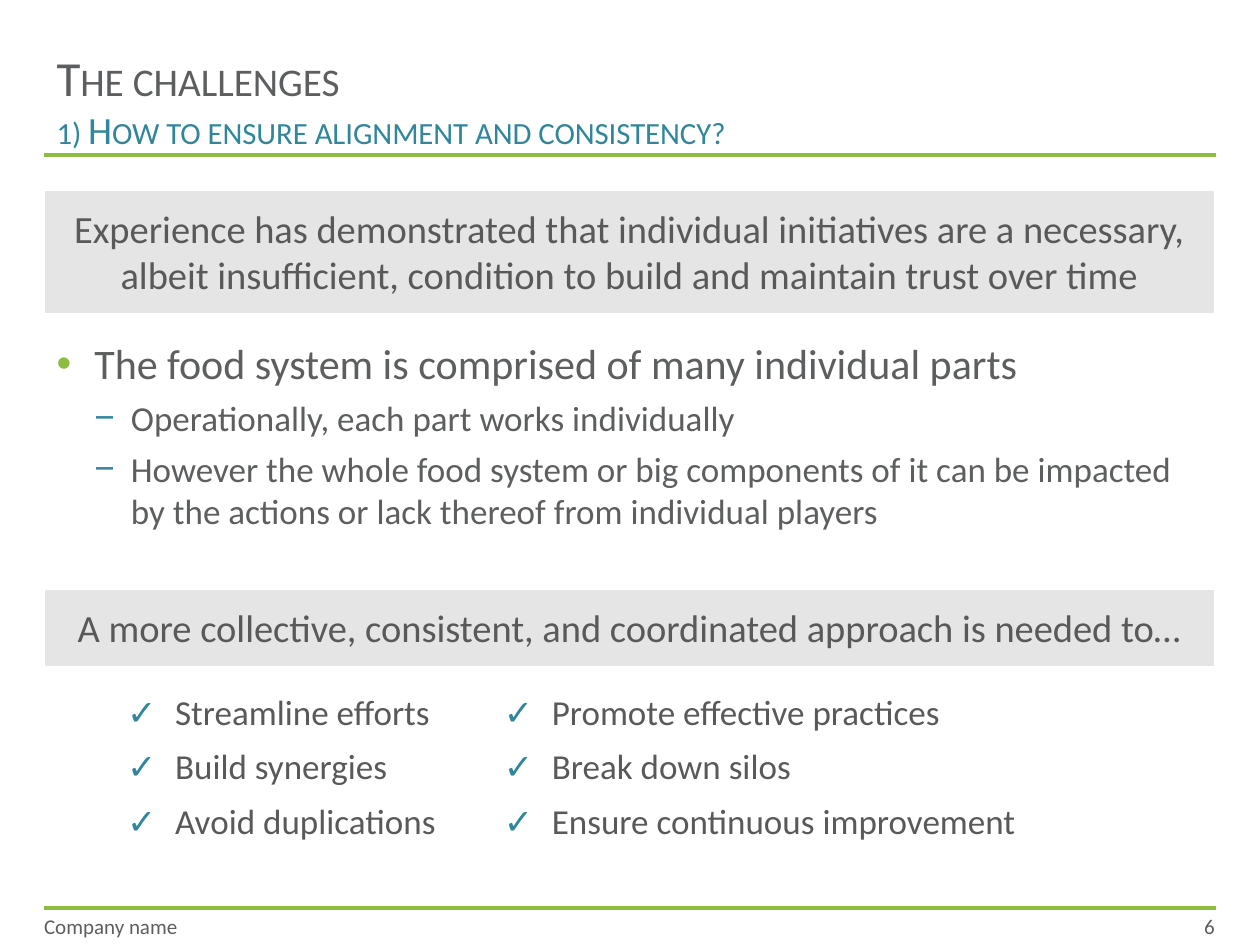
from dataclasses import dataclass

from lxml.etree import SubElement
from pptx import Presentation
from pptx.dml.color import RGBColor
from pptx.enum.shapes import MSO_CONNECTOR, MSO_SHAPE
from pptx.enum.text import MSO_ANCHOR, PP_ALIGN
from pptx.oxml.ns import qn
from pptx.util import Inches, Pt


@dataclass(frozen=True)
class Theme:
    font: str = "Calibri"
    text: str = "5C5E5F"
    dark: str = "595959"
    green: str = "8EBC3F"
    teal: str = "31869B"
    band: str = "D9D9D9"
    white: str = "FFFFFF"
    band_opacity: int = 68
    title: int = 28
    lead: int = 24
    callout: int = 22
    detail: int = 20
    footer: int = 12


@dataclass(frozen=True)
class Bullet:
    char: str
    color: str
    left: float
    hanging: float


@dataclass(frozen=True)
class Point:
    text: str
    size: int
    bullet: Bullet
    level: int = 0


@dataclass(frozen=True)
class Callout:
    text: str
    top: float
    height: float


@dataclass(frozen=True)
class Footer:
    text: str
    left: float
    width: float
    align: PP_ALIGN


THEME = Theme()
LEFT, WIDTH = 0.35, 9.29
RULE_TOPS = (1.23, 7.21)
DOT = Bullet("•", THEME.green, 0.3, 0.3)
DASH = Bullet("−", THEME.teal, 0.59, 0.29)
CHECK = Bullet("✓", THEME.teal, 0.38, 0.38)

POINTS = (
    Point("The food system is comprised of many individual parts", THEME.lead, DOT),
    Point("Operationally, each part works individually", THEME.detail, DASH, 1),
    Point("However the whole food system or big components of it can be impacted "
          "by the actions or lack thereof from individual players", THEME.detail, DASH, 1),
)
CALLOUTS = (
    Callout("Experience has demonstrated that individual initiatives are a necessary, "
            "albeit insufficient, condition to build and maintain trust over time", 1.51, 0.98),
    Callout("A more collective, consistent, and coordinated approach is needed to…", 4.68, 0.61),
)
GOALS = (
    ("Streamline efforts", "Promote effective practices"),
    ("Build synergies", "Break down silos"),
    ("Avoid duplications", "Ensure continuous improvement"),
)
GOAL_WIDTHS = (2.99, 5.67)
GOAL_HEIGHT = 0.43
FOOTERS = (
    Footer("Company name", LEFT, 1.81, PP_ALIGN.LEFT),
    Footer("6", 7.99, 1.65, PP_ALIGN.RIGHT),
)


def add_run(paragraph, text: str, size: int, color: str, small_caps: bool = False) -> None:
    run = paragraph.add_run()
    run.text = text
    for name, value in {"name": THEME.font, "size": Pt(size)}.items():
        setattr(run.font, name, value)
    run.font.color.rgb = RGBColor.from_string(color)
    if small_caps:
        run.font._element.set("cap", "small")


def set_bullet(paragraph, bullet: Bullet) -> None:
    properties = paragraph._p.get_or_add_pPr()
    properties.set("marL", str(Inches(bullet.left)))
    properties.set("indent", str(-Inches(bullet.hanging)))
    color = SubElement(properties, qn("a:buClr"))
    SubElement(color, qn("a:srgbClr"), val=bullet.color)
    SubElement(properties, qn("a:buFont"), typeface="Arial")
    SubElement(properties, qn("a:buChar"), char=bullet.char)


def add_text_frame(slide, left: float, top: float, width: float, height: float, **formats):
    box = slide.shapes.add_textbox(Inches(left), Inches(top), Inches(width), Inches(height))
    for name, value in {"word_wrap": True, **formats}.items():
        setattr(box.text_frame, name, value)
    return box.text_frame


def draw_rule(slide, top: float) -> None:
    rule = slide.shapes.add_connector(
        MSO_CONNECTOR.STRAIGHT, Inches(LEFT), Inches(top), Inches(LEFT + 9.3), Inches(top))
    rule.line.color.rgb = RGBColor.from_string(THEME.green)
    rule.line.width = Pt(2.25)
    SubElement(rule._element.spPr, qn("a:effectLst"))


def draw_title(slide) -> None:
    frame = add_text_frame(slide, LEFT, 0.3, WIDTH, 0.98, vertical_anchor=MSO_ANCHOR.MIDDLE)
    heading = frame.paragraphs[0]
    add_run(heading, "The challenges", THEME.title, THEME.text, True)
    heading.add_line_break()
    add_run(heading, "1) How to ensure alignment and consistency?",
            THEME.callout, THEME.teal, True)


def draw_points(slide) -> None:
    frame = add_text_frame(slide, LEFT, 2.63, WIDTH, 1.95)
    for index, point in enumerate(POINTS):
        paragraph = frame.add_paragraph() if index else frame.paragraphs[0]
        paragraph.level = point.level
        paragraph.space_before = Pt(5)
        set_bullet(paragraph, point.bullet)
        add_run(paragraph, point.text, point.size, THEME.text)


def draw_callout(slide, callout: Callout) -> None:
    band = slide.shapes.add_shape(MSO_SHAPE.RECTANGLE, Inches(LEFT), Inches(callout.top),
                                  Inches(WIDTH), Inches(callout.height))
    band.shadow.inherit = False
    band.fill.solid()
    band.fill.fore_color.rgb = RGBColor.from_string(THEME.band)
    shade = band._element.spPr.find(qn("a:solidFill")).find(qn("a:srgbClr"))
    SubElement(shade, qn("a:alpha"), val=str(THEME.band_opacity * 1000))
    band.line.color.rgb = RGBColor.from_string(THEME.white)
    band.line.width = Pt(0.75)
    formats = {"word_wrap": True, "vertical_anchor": MSO_ANCHOR.MIDDLE,
               "margin_top": Inches(0.04), "margin_bottom": Inches(0.05)}
    for name, value in formats.items():
        setattr(band.text_frame, name, value)
    statement = band.text_frame.paragraphs[0]
    statement.alignment = PP_ALIGN.CENTER
    add_run(statement, callout.text, THEME.callout, THEME.dark)


def draw_goals(slide) -> None:
    goals = slide.shapes.add_table(
        len(GOALS), len(GOAL_WIDTHS), Inches(0.91), Inches(5.44),
        Inches(sum(GOAL_WIDTHS)), Inches(GOAL_HEIGHT * len(GOALS))).table
    for name in ("first_row", "horz_banding"):
        setattr(goals, name, False)
    for column, width in zip(goals.columns, GOAL_WIDTHS):
        column.width = Inches(width)
    for row, texts in zip(goals.rows, GOALS):
        for cell, text in zip(row.cells, texts):
            cell.fill.background()
            goal = cell.text_frame.paragraphs[0]
            set_bullet(goal, CHECK)
            add_run(goal, text, THEME.detail, THEME.dark)


def draw_footer(slide, footer: Footer) -> None:
    margins = {f"margin_{side}": 0 for side in ("left", "top", "right", "bottom")}
    frame = add_text_frame(slide, footer.left, 7.21, footer.width, 0.28,
                           vertical_anchor=MSO_ANCHOR.MIDDLE, **margins)
    frame.paragraphs[0].alignment = footer.align
    add_run(frame.paragraphs[0], footer.text, THEME.footer, THEME.text)


def main() -> None:
    deck = Presentation()
    deck.slide_width, deck.slide_height = Inches(10), Inches(7.5)
    slide = deck.slides.add_slide(deck.slide_layouts[6])
    for top in RULE_TOPS:
        draw_rule(slide, top)
    draw_title(slide)
    draw_points(slide)
    for callout in CALLOUTS:
        draw_callout(slide, callout)
    draw_goals(slide)
    for footer in FOOTERS:
        draw_footer(slide, footer)
    deck.save("out.pptx")


if __name__ == "__main__":
    main()
